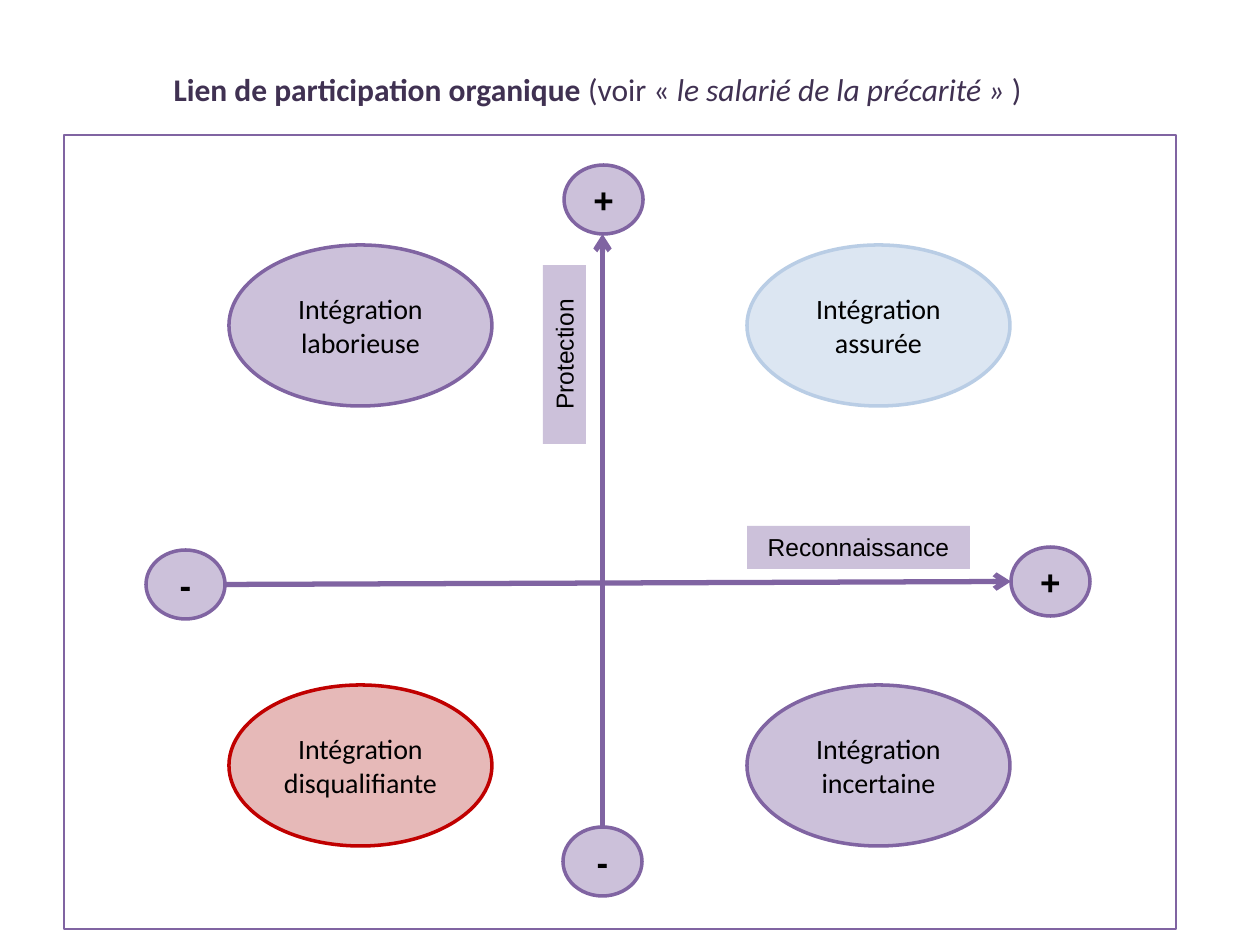
from lxml import etree
from pptx import Presentation
from pptx.dml.color import RGBColor
from pptx.enum.shapes import MSO_CONNECTOR, MSO_SHAPE
from pptx.enum.text import MSO_ANCHOR, MSO_AUTO_SIZE, PP_ALIGN
from pptx.oxml.ns import qn
from pptx.util import Pt

PX = 914400 / 126
RECT, OVAL = MSO_SHAPE.RECTANGLE, MSO_SHAPE.OVAL
STRAIGHT = MSO_CONNECTOR.STRAIGHT
TOP, MIDDLE = MSO_ANCHOR.TOP, MSO_ANCHOR.MIDDLE
LEFT, CENTER = PP_ALIGN.LEFT, PP_ALIGN.CENTER

PURPLE = RGBColor(0x80, 0x64, 0xA2)
LILAC = RGBColor(0xCC, 0xC1, 0xDA)
PALE_BLUE = RGBColor(0xDC, 0xE6, 0xF2)
BLUE = RGBColor(0xB9, 0xCD, 0xE5)
PINK = RGBColor(0xE6, 0xB9, 0xB8)
RED = RGBColor(0xC0, 0x00, 0x00)
PLUM = RGBColor(0x40, 0x31, 0x52)
BLACK = RGBColor(0, 0, 0)

# Content: title runs are (text, bold, italic)
TITLE = [
    ("Lien de participation organique ", True, False),
    ("(voir « ", False, False),
    ("le salarié de la précarité »", False, True),
    (" )", False, False),
]
TITLE_BOX = (161, 64, 882, 50)
FRAME_BOX = (64, 135, 1112, 794)

# Quadrants: text, column, row, fill, outline
QUADRANTS = [
    ("Intégration laborieuse", 0, 0, LILAC, PURPLE),
    ("Intégration assurée", 1, 0, PALE_BLUE, BLUE),
    ("Intégration disqualifiante", 0, 1, PINK, RED),
    ("Intégration incertaine", 1, 1, LILAC, PURPLE),
]
COLUMNS, ROWS = (229, 747), (245, 685)
QUADRANT_W, QUADRANT_H = 263, 161

# Axis ends: sign, left, top
POLES = {
    "west": ("-", 146, 550),
    "east": ("+", 1011, 547),
    "south": ("-", 563, 827),
    "north": ("+", 564, 165),
}
POLE_W, POLE_H = 79, 69

# Axis labels: text, box, rotation
AXIS_LABELS = [
    ("Protection", (475, 333, 179, 43), 270),
    ("Reconnaissance", (747, 526, 223, 43), 0),
]


def emu(*lengths):
    return [round(length * PX) for length in lengths]


def add_block(slide, kind, box, fill=None, outline=None, width=2):
    block = slide.shapes.add_shape(kind, *emu(*box))
    block.shadow.inherit = False
    if fill is None:
        block.fill.background()
    else:
        block.fill.solid()
        block.fill.fore_color.rgb = fill
    if outline is None:
        block.line.fill.background()
    else:
        block.line.color.rgb = outline
        block.line.width = Pt(width)
    return block


def write(block, text, font_name, size, bold=False, anchor=MIDDLE):
    frame = block.text_frame
    frame.word_wrap = True
    frame.vertical_anchor = anchor
    paragraph = frame.paragraphs[0]
    paragraph.text = text
    paragraph.alignment = CENTER
    font = paragraph.font
    font.name, font.size, font.bold = font_name, Pt(size), bold
    font.color.rgb = BLACK


def add_axis(slide, start, end):
    axis = slide.shapes.add_connector(STRAIGHT, *emu(*start, *end))
    axis.line.color.rgb = PURPLE
    axis.line.width = Pt(3)
    line = axis.line._get_or_add_ln()
    etree.SubElement(line, qn("a:tailEnd"), type="arrow")
    etree.SubElement(axis._element.spPr, qn("a:effectLst"))


def add_title(slide):
    title = slide.shapes.title
    title.left, title.top, title.width, title.height = emu(*TITLE_BOX)
    frame = title.text_frame
    frame.auto_size = MSO_AUTO_SIZE.NONE
    frame.word_wrap = False
    frame.vertical_anchor = TOP
    paragraph = frame.paragraphs[0]
    paragraph.alignment = LEFT
    paragraph.font.name, paragraph.font.size = "Calibri", Pt(18)
    paragraph.font.color.rgb = PLUM
    for text, bold, italic in TITLE:
        run = paragraph.add_run()
        run.text = text
        run.font.bold, run.font.italic = bold, italic


def main():
    prs = Presentation()
    prs.slide_width, prs.slide_height = emu(1260, 945)
    slide = prs.slides.add_slide(prs.slide_layouts[5])
    add_title(slide)

    # Axes run between the facing edges of the poles
    _, west_x, west_y = POLES["west"]
    _, east_x, east_y = POLES["east"]
    _, south_x, south_y = POLES["south"]
    _, _, north_y = POLES["north"]
    middle_x = south_x + POLE_W / 2
    add_axis(slide, (west_x + POLE_W, west_y + POLE_H / 2),
             (east_x, east_y + POLE_H / 2))
    add_axis(slide, (middle_x, south_y), (middle_x, north_y + POLE_H))

    # Axis labels
    for text, box, rotation in AXIS_LABELS:
        label = add_block(slide, RECT, box, LILAC)
        label.rotation = rotation
        write(label, text, "Arial", 14, anchor=TOP)

    # Poles
    for sign, left, top in POLES.values():
        pole = add_block(slide, OVAL, (left, top, POLE_W, POLE_H), LILAC, PURPLE)
        write(pole, sign, "Arial", 20, bold=True)

    # Quadrants
    for text, column, row, fill, outline in QUADRANTS:
        box = (COLUMNS[column], ROWS[row], QUADRANT_W, QUADRANT_H)
        write(add_block(slide, OVAL, box, fill, outline), text, "Calibri", 16)

    # Frame
    add_block(slide, RECT, FRAME_BOX, outline=PURPLE, width=1)

    prs.save("out.pptx")


if __name__ == "__main__":
    main()
